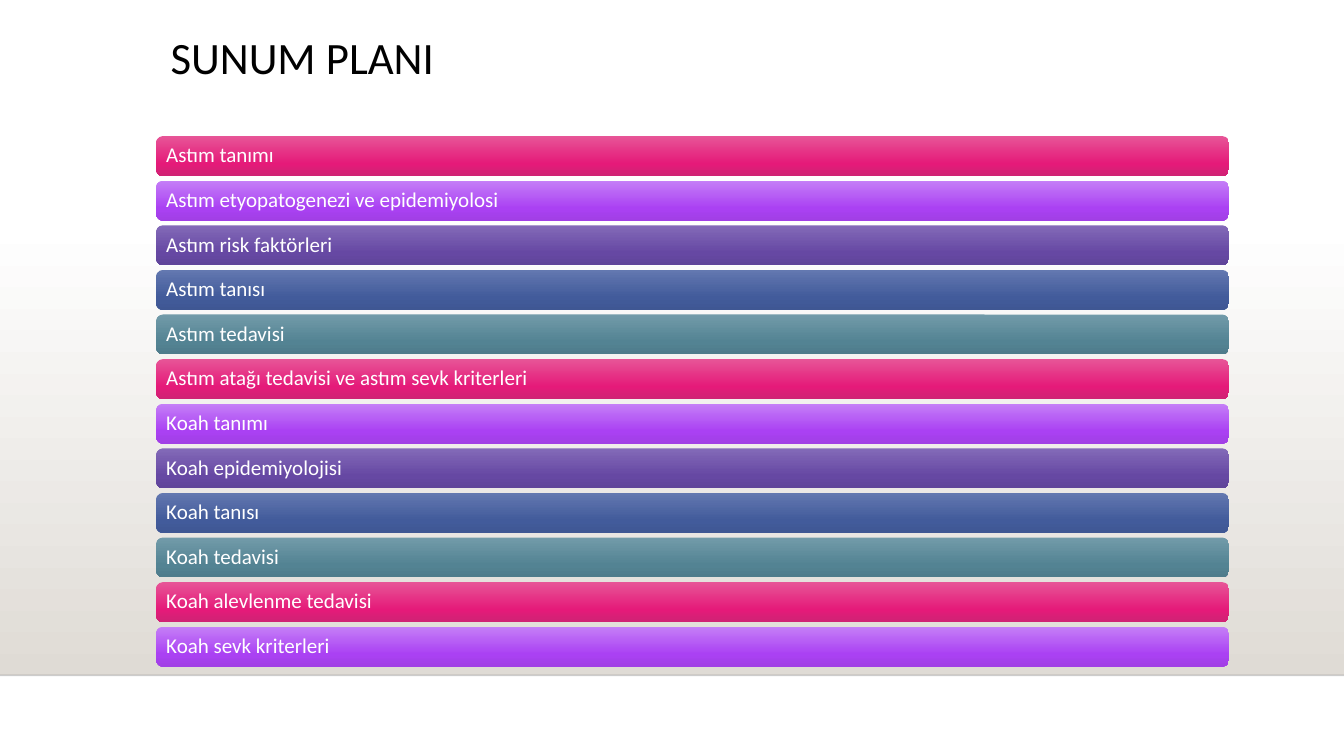
from lxml import etree
from pptx import Presentation
from pptx.dml.color import RGBColor
from pptx.enum.shapes import MSO_CONNECTOR, MSO_SHAPE
from pptx.enum.text import MSO_ANCHOR, PP_ALIGN
from pptx.oxml.ns import qn
from pptx.util import Inches, Pt

RECT, ROUND = MSO_SHAPE.RECTANGLE, MSO_SHAPE.ROUNDED_RECTANGLE
STRAIGHT = MSO_CONNECTOR.STRAIGHT
TOP, MIDDLE = MSO_ANCHOR.TOP, MSO_ANCHOR.MIDDLE
LEFT = PP_ALIGN.LEFT

COLS, ROWS = 160, 90
FLOOR_TOP, FLOOR_BOTTOM = 26.5, 80.4
BAR_LEFT, BAR_TOP, BAR_WIDTH, BAR_HEIGHT, BAR_PITCH = 18.6, 16.2, 127.7, 4.75, 5.31

COLORS = {"text": "000000", "white": "FFFFFF", "floor": "DFDBD5", "edge": "000001"}
BAR_STOPS = [
    {0: "E75597", 69: "E51A79", 100: "CF2374"},
    {0: "C57FF7", 69: "AA41F3", 100: "A13FE5"},
    {0: "836AB8", 69: "6648A3", 100: "60459A"},
    {0: "6378B0", 69: "425B9B", 100: "3F5793"},
    {0: "729BA9", 69: "538393", 100: "4F7C8B"},
]
TITLE = "SUNUM PLANI"
TOPICS = [
    "Astım tanımı",
    "Astım etyopatogenezi ve epidemiyolosi",
    "Astım risk faktörleri",
    "Astım tanısı",
    "Astım tedavisi",
    "Astım atağı tedavisi ve astım sevk kriterleri",
    "Koah tanımı",
    "Koah epidemiyolojisi",
    "Koah tanısı",
    "Koah tedavisi",
    "Koah alevlenme tedavisi",
    "Koah sevk kriterleri",
]


class Deck:
    font = "Calibri"

    def __init__(self):
        self.prs = Presentation()
        self.prs.slide_width, self.prs.slide_height = Inches(13.333), Inches(7.5)
        self.s = self.prs.slides.add_slide(self.prs.slide_layouts[5])

    def box(self, col, row, cols, rows):
        w, h = self.prs.slide_width / COLS, self.prs.slide_height / ROWS
        return [round(v) for v in (col * w, row * h, cols * w, rows * h)]

    def label(self, sp, text, size, color, anchor, inset):
        tf = sp.text_frame
        tf.text = text
        p = tf.paragraphs[0]
        r = p.runs[0]
        frame = {"word_wrap": True, "vertical_anchor": anchor,
                 "margin_left": Inches(inset), "margin_right": Inches(inset),
                 "margin_top": Inches(0.05), "margin_bottom": Inches(0.05)}
        para = {"alignment": LEFT, "line_spacing": 0.9}
        font = {"name": self.font, "size": Pt(size), "bold": False}
        for target, values in ((tf, frame), (p, para), (r.font, font)):
            for name, value in values.items():
                setattr(target, name, value)
        r.font.color.rgb = RGBColor.from_string(COLORS[color])

    def title(self, text, *cells):
        sp = self.s.shapes.title
        sp.left, sp.top, sp.width, sp.height = self.box(*cells)
        self.label(sp, text, 32, "text", TOP, 0.1)

    def panel(self, kind, stops, *cells):
        sp = self.s.shapes.add_shape(kind, *self.box(*cells))
        sp.shadow.inherit = False
        sp.line.fill.background()
        sp.fill.gradient()
        sp.fill.gradient_angle = 270
        gs_list = next(sp._element.spPr.iter(qn("a:gsLst")))
        for gs in list(gs_list):
            gs_list.remove(gs)
        for position, color in stops.items():
            gs = etree.SubElement(gs_list, qn("a:gs"), pos=str(position * 1000))
            etree.SubElement(gs, qn("a:srgbClr"), val=color)
        return sp

    def bar(self, text, stops, *cells):
        sp = self.panel(ROUND, stops, *cells)
        self.label(sp, text, 15, "white", MIDDLE, 0.08)

    def rule(self, row, color, width, opacity):
        x, y, w, _ = self.box(0, row, COLS, 0)
        line = self.s.shapes.add_connector(STRAIGHT, x, y, x + w, y)
        line.line.width = Pt(width)
        line.line.color.rgb = RGBColor.from_string(COLORS[color])
        spPr = line._element.spPr
        clr = next(spPr.iter(qn("a:srgbClr")))
        etree.SubElement(clr, qn("a:alpha"), val=str(opacity * 1000))
        etree.SubElement(spPr, qn("a:effectLst"))


def main():
    deck = Deck()
    deck.panel(RECT, {0: COLORS["white"], 100: COLORS["floor"]},
               0, FLOOR_TOP, COLS, FLOOR_BOTTOM - FLOOR_TOP)
    deck.rule(FLOOR_BOTTOM, "edge", 1, 20)
    deck.title(TITLE, 19.1, 3.7, 126, 13.8)
    for i, topic in enumerate(TOPICS):
        deck.bar(topic, BAR_STOPS[i % len(BAR_STOPS)],
                 BAR_LEFT, BAR_TOP + i * BAR_PITCH, BAR_WIDTH, BAR_HEIGHT)
    deck.prs.save("out.pptx")


if __name__ == "__main__":
    main()
